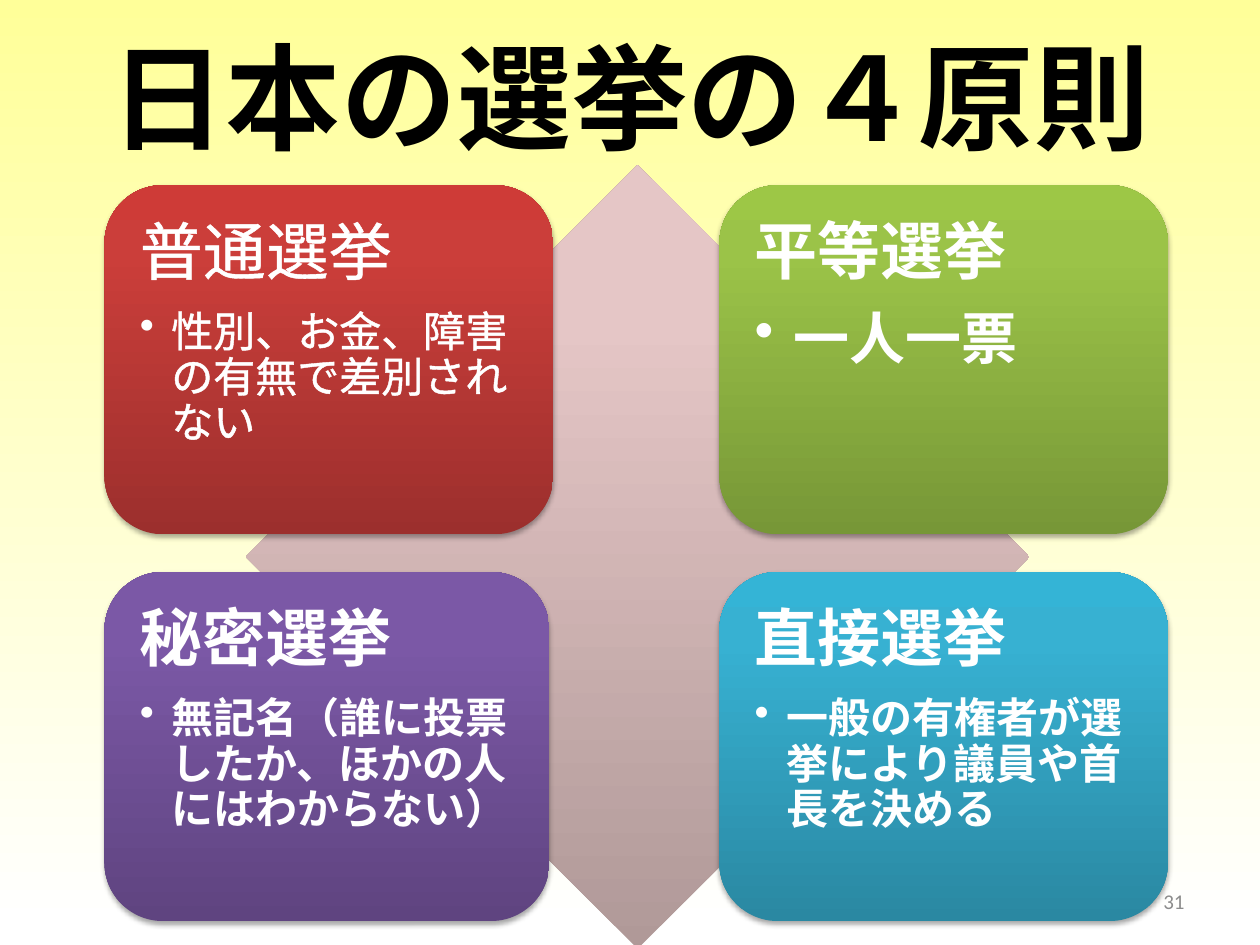
from collections import namedtuple
from copy import deepcopy

from lxml import etree
from pptx import Presentation
from pptx.dml.color import RGBColor
from pptx.enum.shapes import MSO_SHAPE
from pptx.enum.text import MSO_ANCHOR, PP_ALIGN
from pptx.oxml.ns import qn
from pptx.util import Inches, Pt

DIAMOND, ROUNDED = MSO_SHAPE.DIAMOND, MSO_SHAPE.ROUNDED_RECTANGLE
TOP, MIDDLE = MSO_ANCHOR.TOP, MSO_ANCHOR.MIDDLE
LEFT, CENTER, RIGHT = PP_ALIGN.LEFT, PP_ALIGN.CENTER, PP_ALIGN.RIGHT

BLACK = RGBColor(0x00, 0x00, 0x00)
WHITE = RGBColor(0xFF, 0xFF, 0xFF)
GRAY = RGBColor(0x8C, 0x8C, 0x8C)
YELLOW = RGBColor(0xFF, 0xFF, 0x99)
PINKS = RGBColor(0xB0, 0x99, 0x98), RGBColor(0xE5, 0xC6, 0xC6), RGBColor(0xE6, 0xC7, 0xC6)
REDS = RGBColor(0x9C, 0x2F, 0x2D), RGBColor(0xCB, 0x3E, 0x3A), RGBColor(0xCE, 0x3B, 0x37)
GREENS = RGBColor(0x77, 0x97, 0x37), RGBColor(0x9B, 0xC3, 0x48), RGBColor(0x9D, 0xC7, 0x46)
PURPLES = RGBColor(0x5F, 0x44, 0x80), RGBColor(0x7B, 0x58, 0xA6), RGBColor(0x7C, 0x57, 0xA8)
BLUES = RGBColor(0x2A, 0x88, 0xA2), RGBColor(0x37, 0xB1, 0xD2), RGBColor(0x34, 0xB4, 0xD6)

JAPANESE_FONT, NUMBER_FONT = "Noto Sans CJK JP", "Calibri"
SLIDE_WIDTH, SLIDE_HEIGHT = Inches(10), Inches(7.5)
COLUMN, ROW = SLIDE_WIDTH / 100, SLIDE_HEIGHT / 75
COLUMN_GAP, ROW_GAP, CARD_MARGIN = 13.2, 3, 1.3

Box = namedtuple("Box", "left top width height")
Card = namedtuple("Card", "heading body body_size indent bold colors trim")
CARDS = (
    Card("普通選挙", "性別、お金、障害の有無で差別されない", 24, 0.25, False, REDS, 0),
    Card("平等選挙", "一人一票", 32, 0.31, True, GREENS, 0),
    Card("秘密選挙", "無記名（誰に投票したか、ほかの人にはわからない）", 24, 0.25, True, PURPLES, 0.3),
    Card("直接選挙", "一般の有権者が選挙により議員や首長を決める", 24, 0.25, True, BLUES, 0),
)


def place(box):
    """Turn a box in grid columns and rows into slide lengths."""
    return (int(box.left * COLUMN), int(box.top * ROW),
            int(box.width * COLUMN), int(box.height * ROW))


def add_child(parent, tag, **attributes):
    """Append a drawing element and return it."""
    return etree.SubElement(parent, qn(tag), attributes)


def add_gradient_shape(slide, kind, box, colors):
    """Add a borderless shape that shades from bottom to top."""
    shape = slide.shapes.add_shape(kind, *place(box))
    shape.shadow.inherit = False
    shape.line.fill.background()
    shape.fill.gradient()
    shape.fill.gradient_angle = 90
    stop_list = shape._element.spPr.find(".//" + qn("a:gsLst"))
    stop_list.append(deepcopy(stop_list[-1]))
    for stop, position, color in zip(shape.fill.gradient_stops, (0, 0.8, 1), colors):
        stop.position = position
        stop.color.rgb = color
    return shape


def add_shadow(shape):
    """Give a shape a soft shadow below it."""
    effects = shape._element.spPr.find(qn("a:effectLst"))
    shadow = add_child(effects, "a:outerShdw", blurRad=str(Pt(3.1)), dist=str(Pt(1.8)),
                       dir="5400000", rotWithShape="0")
    color = add_child(shadow, "a:srgbClr", val=str(BLACK))
    add_child(color, "a:alpha", val="35000")


def add_text_frame(slide, box, anchor):
    """Add a wrapping text box and return its frame."""
    frame = slide.shapes.add_textbox(*place(box)).text_frame
    frame.word_wrap = True
    frame.vertical_anchor = anchor
    return frame


def add_run(paragraph, text, size, color, bold=False, font=JAPANESE_FONT):
    """Add a formatted run and return it."""
    run = paragraph.add_run()
    run.text = text
    run.font.size = Pt(size)
    run.font.bold = bold
    run.font.color.rgb = color
    run.font.name = font
    add_child(run._r.get_or_add_rPr(), "a:ea", typeface=font)
    return run


def outline_run(run):
    """Draw a thin white line around the letters of a run."""
    line = etree.Element(qn("a:ln"), w=str(Pt(1.45)))
    add_child(add_child(line, "a:solidFill"), "a:srgbClr", val=str(WHITE))
    run._r.get_or_add_rPr().insert(0, line)


def set_spacing(paragraph, percent_after):
    """Tighten the lines and set the space after as a percentage."""
    paragraph.line_spacing = 0.9
    after = add_child(paragraph._p.get_or_add_pPr(), "a:spcAft")
    add_child(after, "a:spcPct", val=str(percent_after * 1000))


def set_bullet(paragraph, indent):
    """Give a paragraph a hanging bullet."""
    properties = paragraph._p.get_or_add_pPr()
    properties.set("marL", str(Inches(indent)))
    properties.set("indent", str(-Inches(indent)))
    add_child(properties, "a:buChar", char="•")


def add_line(slide, box, text, size, color, align, bold=False, font=JAPANESE_FONT):
    """Add one line of text centred vertically in its box."""
    paragraph = add_text_frame(slide, box, MIDDLE).paragraphs[0]
    paragraph.alignment = align
    add_run(paragraph, text, size, color, bold, font)


def add_card(slide, box, card):
    """Add a rounded card with a heading and a bullet."""
    add_shadow(add_gradient_shape(slide, ROUNDED, box, card.colors))
    inner = Box(box.left + CARD_MARGIN, box.top + CARD_MARGIN,
                box.width - 2 * CARD_MARGIN, box.height - 2 * CARD_MARGIN)
    frame = add_text_frame(slide, inner, TOP)
    frame.margin_left = frame.margin_right = Inches(0.15)
    frame.margin_top = frame.margin_bottom = Inches(0.15)
    heading, body = frame.paragraphs[0], frame.add_paragraph()
    body.level = 1
    for paragraph, text, size, after in ((heading, card.heading, 36, 35),
                                         (body, card.body, card.body_size, 15)):
        paragraph.alignment = LEFT
        set_spacing(paragraph, after)
        run = add_run(paragraph, text, size, WHITE, card.bold)
        if not card.bold:
            outline_run(run)
    set_bullet(body, card.indent)


def add_card_grid(slide, box):
    """Lay the four principles out in two columns and two rows."""
    width = (box.width - COLUMN_GAP) / 2
    height = (box.height - ROW_GAP) / 2
    for index, card in enumerate(CARDS):
        row, column = divmod(index, 2)
        add_card(slide, Box(box.left + column * (width + COLUMN_GAP),
                            box.top + row * (height + ROW_GAP),
                            width - card.trim, height), card)


def paint_background(slide):
    """Shade the background from yellow down to white."""
    fill = slide.background.fill
    fill.gradient()
    fill.gradient_angle = 270
    for stop, position, color in zip(fill.gradient_stops, (0, 0.98), (YELLOW, WHITE)):
        stop.position = position
        stop.color.rgb = color


def main():
    """Build and save the slide."""
    presentation = Presentation()
    presentation.slide_width, presentation.slide_height = SLIDE_WIDTH, SLIDE_HEIGHT
    slide = presentation.slides.add_slide(presentation.slide_layouts[6])
    paint_background(slide)
    add_line(slide, Box(3.1, 1.3, 93.8, 12.5), "日本の選挙の４原則", 66, BLACK, CENTER, bold=True)
    add_gradient_shape(slide, DIAMOND, Box(19.5, 13.1, 62.2, 62.2), PINKS)
    add_card_grid(slide, Box(8.3, 14.7, 84.4, 58.4))
    add_line(slide, Box(71.7, 69.5, 23.3, 4), "31", 12, GRAY, RIGHT, font=NUMBER_FONT)
    presentation.save("out.pptx")


if __name__ == "__main__":
    main()
